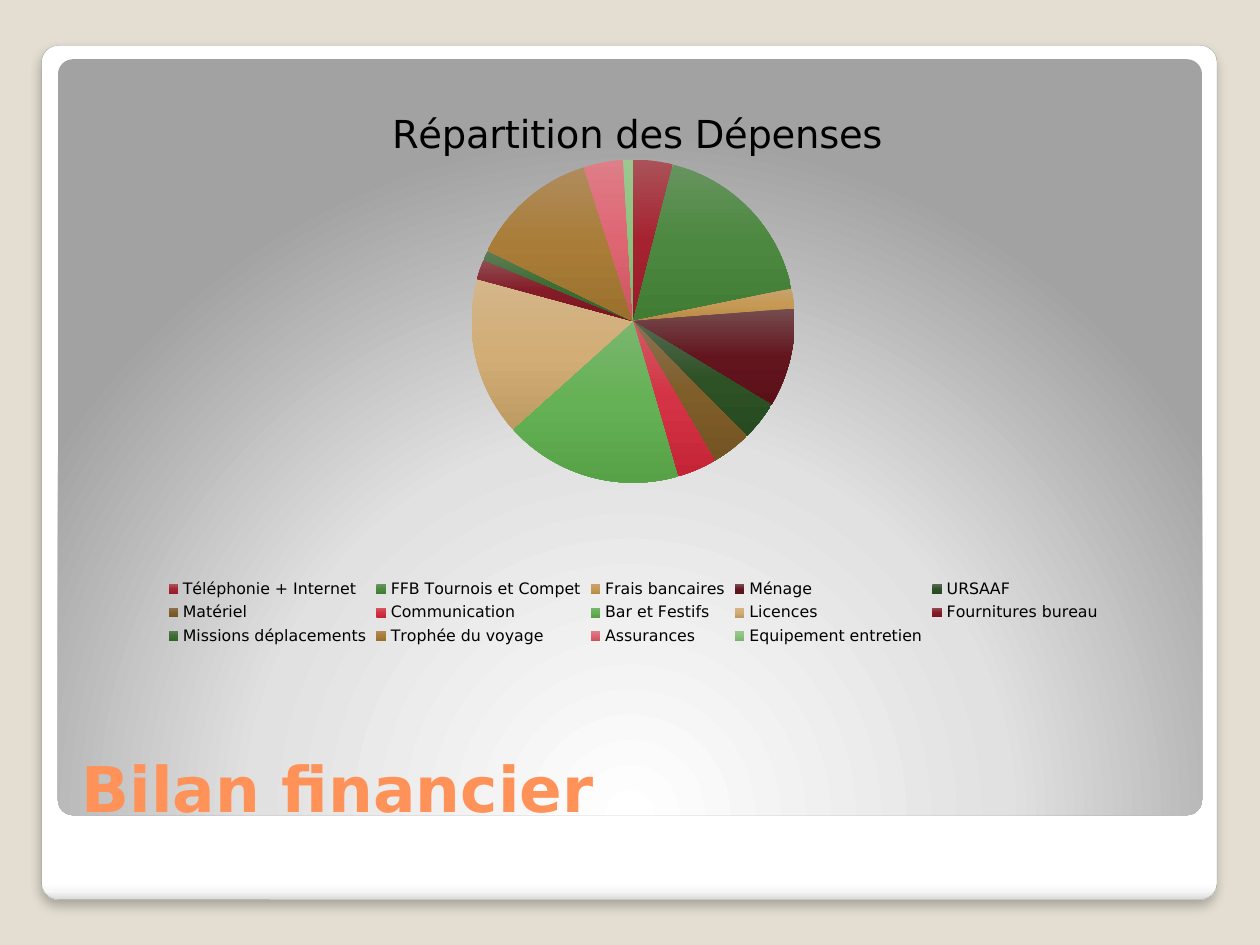
from dataclasses import dataclass

from lxml.etree import SubElement
from pptx import Presentation
from pptx.chart.chart import Chart
from pptx.chart.data import CategoryChartData
from pptx.dml.color import RGBColor
from pptx.dml.fill import FillFormat
from pptx.enum.chart import XL_CHART_TYPE, XL_LEGEND_POSITION
from pptx.enum.shapes import MSO_SHAPE
from pptx.enum.text import MSO_ANCHOR
from pptx.oxml import parse_xml
from pptx.oxml.ns import nsdecls, qn
from pptx.shapes.autoshape import Shape
from pptx.slide import Slide
from pptx.text.text import Font
from pptx.util import Inches, Pt

SLIDE_WIDTH = Inches(10)
SLIDE_HEIGHT = Inches(7.5)
FONT_NAME = "DejaVu Sans"
BEIGE = RGBColor(0xE3, 0xDE, 0xD1)
WHITE = RGBColor(0xFF, 0xFF, 0xFF)
BLACK = RGBColor(0x00, 0x00, 0x00)
ORANGE = RGBColor(0xFF, 0x92, 0x58)
EDGE_GRAY = RGBColor(0xA4, 0xA4, 0xA4)

VERTICAL = '<a:lin ang="5400000" scaled="0"/>'
FROM_BOTTOM = (
    '<a:path path="circle">'
    '<a:fillToRect l="50000" t="175000" r="50000" b="-75000"/></a:path>'
)


@dataclass(frozen=True)
class Area:
    left: float
    top: float
    width: float
    height: float

    def lengths(self) -> tuple[int, int, int, int]:
        return (
            int(SLIDE_WIDTH * self.left / 100),
            int(SLIDE_HEIGHT * self.top / 100),
            int(SLIDE_WIDTH * self.width / 100),
            int(SLIDE_HEIGHT * self.height / 100),
        )


@dataclass(frozen=True)
class Stop:
    percent: int
    color: RGBColor


@dataclass(frozen=True)
class Expense:
    label: str
    share: int
    colors: tuple[str, str, str]

    def stops(self) -> list[Stop]:
        return [
            Stop(percent, RGBColor.from_string(color))
            for percent, color in zip((0, 50, 100), self.colors)
        ]


CARD = Area(3.3, 4.8, 93.3, 90.4)
PANEL = Area(4.6, 6.27, 90.8, 80)
TITLE = Area(5.5, 72.67, 89.5, 15.33)
CHART = Area(5.5, 7.73, 89.5, 61.07)

CARD_STOPS = [
    Stop(0, WHITE),
    Stop(98, WHITE),
    Stop(99, RGBColor(0xF7, 0xF7, 0xF7)),
    Stop(100, RGBColor(0xDA, 0xDA, 0xDA)),
]
PANEL_STOPS = [
    Stop(0, WHITE),
    Stop(55, RGBColor(0xE1, 0xE1, 0xE1)),
    Stop(100, RGBColor(0xA2, 0xA2, 0xA2)),
]
EXPENSES = [
    Expense("Téléphonie + Internet", 4, ("AB5258", "A52331", "981A28")),
    Expense("FFB Tournois et Compet", 18, ("67945F", "4C883F", "417C35")),
    Expense("Frais bancaires", 2, ("C8A370", "C69954", "B68945")),
    Expense("Ménage", 10, ("754D4F", "63151E", "5B1018")),
    Expense("URSAAF", 4, ("556952", "2E5226", "274A20")),
    Expense("Matériel", 4, ("8B7254", "7F5E2A", "745422")),
    Expense("Communication", 4, ("D35B65", "D33344", "C42536")),
    Expense("Bar et Festifs", 18, ("7AB66F", "65B155", "57A246")),
    Expense("Licences", 16, ("D4B68A", "D2AD76", "BF9B64")),
    Expense("Fournitures bureau", 2, ("8F4F53", "841C28", "791520")),
    Expense("Missions déplacements", 1, ("5D7D57", "3D6D32", "34632A")),
    Expense("Trophée du voyage", 13, ("B08B5C", "A97D38", "9B702D")),
    Expense("Assurances", 4, ("DE7E88", "DE6673", "CC5461")),
    Expense("Equipement entretien", 1, ("9BC891", "8CC47F", "7AB26D")),
]


def style_font(font: Font, size: int, color: RGBColor, bold: bool = False) -> None:
    font.name = FONT_NAME
    font.size = Pt(size)
    font.bold = bold
    font.color.rgb = color


def fill_gradient(fill: FillFormat, stops: list[Stop], direction: str) -> None:
    fill.gradient()
    marks = "".join(
        f'<a:gs pos="{stop.percent * 1000}"><a:srgbClr val="{stop.color}"/></a:gs>'
        for stop in stops
    )
    gradient = parse_xml(
        f'<a:gradFill {nsdecls("a")} rotWithShape="1">'
        f"<a:gsLst>{marks}</a:gsLst>{direction}</a:gradFill>"
    )
    default = fill._xPr.find(qn("a:gradFill"))
    default.getparent().replace(default, gradient)


def add_rounded(slide: Slide, area: Area, stops: list[Stop], direction: str) -> Shape:
    shape = slide.shapes.add_shape(MSO_SHAPE.ROUNDED_RECTANGLE, *area.lengths())
    shape.adjustments[0] = 0.02
    shape.shadow.inherit = False
    shape.line.fill.background()
    fill_gradient(shape.fill, stops, direction)
    return shape


def add_shadow(shape: Shape) -> None:
    effects = shape._element.spPr.find(qn("a:effectLst"))
    shadow = SubElement(
        effects, qn("a:outerShdw"),
        blurRad=str(Pt(6)), dist=str(Pt(4)), dir="5400000", rotWithShape="0",
    )
    color = SubElement(shadow, qn("a:srgbClr"), val=str(BLACK))
    SubElement(color, qn("a:alpha"), val="25000")


def set_layout(element, **values: object) -> None:
    for old in element.findall(qn("c:layout")):
        element.remove(old)
    items = "".join(f'<c:{name} val="{value}"/>' for name, value in values.items())
    layout = parse_xml(
        f'<c:layout {nsdecls("c")}><c:manualLayout>{items}</c:manualLayout></c:layout>'
    )
    position = 1 if element.find(qn("c:tx")) is not None else 0
    element.insert(position, layout)


def add_expense_chart(slide: Slide) -> Chart:
    data = CategoryChartData()
    data.categories = [expense.label for expense in EXPENSES]
    data.add_series("Series 1", [expense.share for expense in EXPENSES])
    chart = slide.shapes.add_chart(XL_CHART_TYPE.PIE, *CHART.lengths(), data).chart
    style_font(chart.font, 10, BLACK)

    title = chart.chart_title
    title.text_frame.text = "Répartition des Dépenses"
    style_font(title.text_frame.paragraphs[0].runs[0].font, 22, BLACK)
    title.include_in_layout = False
    set_layout(title._element, xMode="edge", yMode="edge", x=0.28, y=0.05)

    chart.has_legend = True
    chart.legend.position = XL_LEGEND_POSITION.BOTTOM
    chart.legend.include_in_layout = False
    style_font(chart.legend.font, 9, BLACK)

    plot = chart.plots[0]
    plot.vary_by_categories = True
    for index, expense in enumerate(EXPENSES):
        point_format = plot.series[0].points[index].format
        fill_gradient(point_format.fill, expense.stops(), VERTICAL)
        point_format.line.fill.background()
    set_layout(
        chart._chartSpace.chart.plotArea,
        layoutTarget="inner", xMode="edge", yMode="edge", x=0, y=0.15, w=1, h=0.56,
    )
    return chart


def add_title(slide: Slide) -> None:
    text_frame = slide.shapes.add_textbox(*TITLE.lengths()).text_frame
    text_frame.word_wrap = True
    text_frame.vertical_anchor = MSO_ANCHOR.BOTTOM
    text_frame.text = "Bilan financier"
    style_font(text_frame.paragraphs[0].runs[0].font, 36, ORANGE, bold=True)


def main() -> None:
    presentation = Presentation()
    presentation.slide_width = SLIDE_WIDTH
    presentation.slide_height = SLIDE_HEIGHT
    slide = presentation.slides.add_slide(presentation.slide_layouts[6])
    slide.background.fill.solid()
    slide.background.fill.fore_color.rgb = BEIGE
    card = add_rounded(slide, CARD, CARD_STOPS, VERTICAL)
    card.line.color.rgb = EDGE_GRAY
    card.line.width = Pt(0.16)
    add_shadow(card)
    add_rounded(slide, PANEL, PANEL_STOPS, FROM_BOTTOM)
    add_title(slide)
    add_expense_chart(slide)
    presentation.save("out.pptx")


if __name__ == "__main__":
    main()
